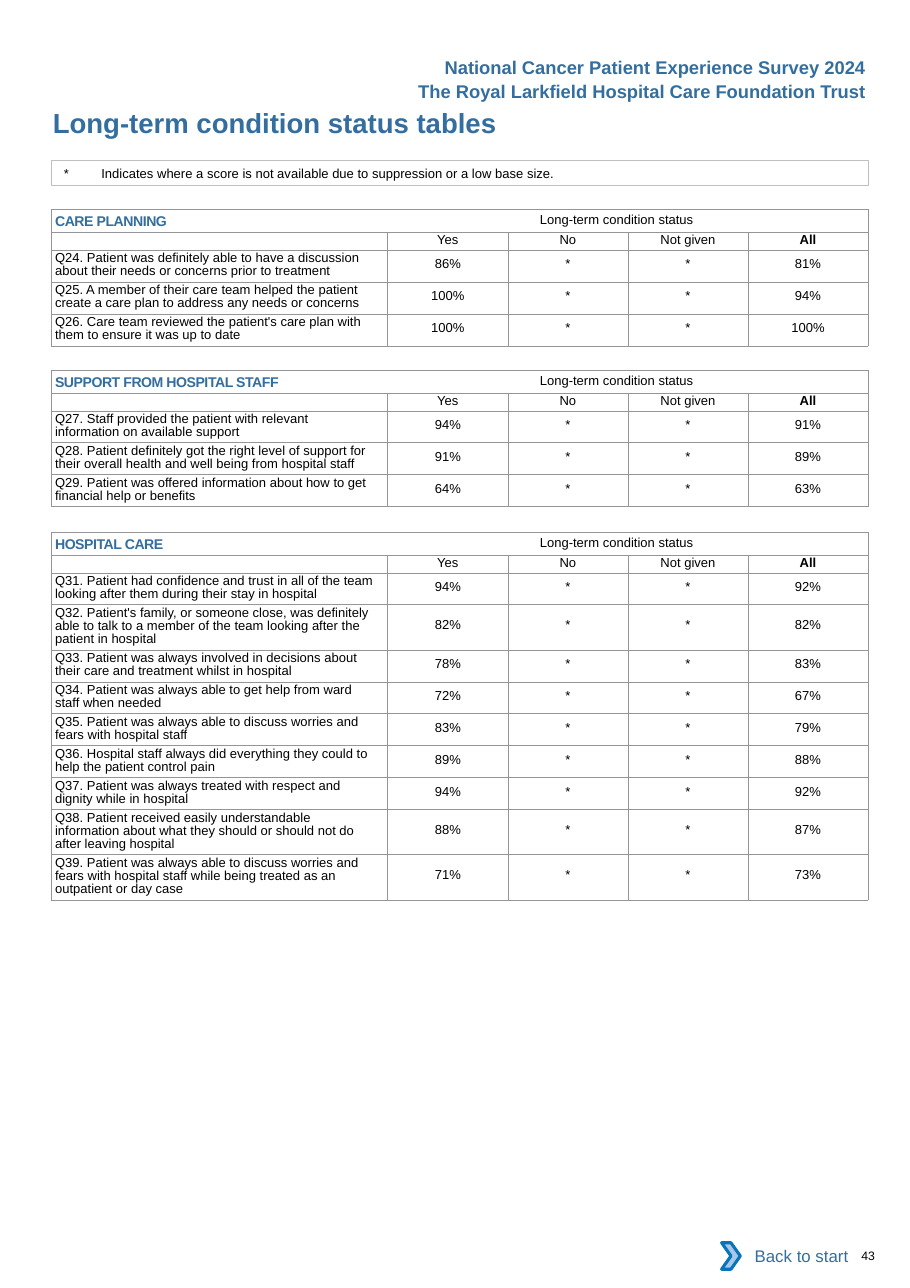
import lxml.etree
import pptx
import pptx.dml.color
import pptx.enum.shapes
import pptx.enum.text
import pptx.oxml.ns
import pptx.util

COLORS = {"heading": "336E9F", "text": "000000", "border": "939598", "note": "BFBFBF",
          "white": "FFFFFF", "arrow": "A8C7E9", "arrow_line": "0A74BB"}
RGB = {name: pptx.dml.color.RGBColor.from_string(value) for name, value in COLORS.items()}
ALIGN = pptx.enum.text.PP_ALIGN
ANCHOR = pptx.enum.text.MSO_ANCHOR
SHAPE = pptx.enum.shapes.MSO_SHAPE
qn = pptx.oxml.ns.qn

presentation = pptx.Presentation()
presentation.slide_width = pptx.util.Inches(8.26)
presentation.slide_height = pptx.util.Inches(11.69)
slide = presentation.slides.add_slide(presentation.slide_layouts[6])
UNIT = presentation.slide_width // 826
LEFT, WIDTH = 47, 741
COLUMNS = [305, 109, 109, 109, 109]
HEADER_ROWS = [21, 16]
ROW_HEIGHTS = {2: 29, 3: 41}
SCORE_TOPS = {2: 6, 3: 12}


def grid(*units):
    return [unit * UNIT for unit in units]


def write(holder, text, size, color="text", bold=False, align=ALIGN.LEFT,
          margins=(0, 0, 0, 0), spacing=None, tab=None):
    frame = getattr(holder, "text_frame", holder)
    (holder.margin_left, holder.margin_top,
     holder.margin_right, holder.margin_bottom) = grid(*margins)
    paragraph = frame.paragraphs[0]
    paragraph.text = text
    paragraph.alignment = align
    paragraph.font.name = "Arial"
    paragraph.font.size = pptx.util.Pt(size)
    paragraph.font.bold = bold
    paragraph.font.color.rgb = RGB[color]
    if spacing:
        paragraph.line_spacing = pptx.util.Pt(spacing)
    if tab:
        tabs = lxml.etree.Element(qn("a:tabLst"))
        lxml.etree.SubElement(tabs, qn("a:tab"), pos=str(tab * UNIT), algn="l")
        paragraph.font._element.addprevious(tabs)
    return paragraph


page_number = slide.shapes.add_textbox(*grid(772, 1133, 51, 13))
write(page_number.text_frame, "43", 8, margins=(10, 0, 0, 0))

title = slide.shapes.add_textbox(*grid(LEFT, 96, 450, 30))
write(title.text_frame, "Long-term condition status tables", 18, "heading", True,
      margins=(1, 0, 0, 0))

note = slide.shapes.add_shape(SHAPE.RECTANGLE, *grid(LEFT, 146, WIDTH, 22))
note.shadow.inherit = False
note.fill.background()
note.line.color.rgb = RGB["note"]
note.line.width = pptx.util.Pt(0.5)
note.text_frame.vertical_anchor = ANCHOR.TOP
write(note.text_frame,
      "*\tIndicates where a score is not available due to suppression or a low base size.",
      8.5, margins=(11, 4, 0, 4), tab=34)

sections = [
    ("CARE PLANNING", 190, [
        ("Q24. Patient was definitely able to have a discussion about their needs or concerns prior to treatment", 2, "86%", "81%"),
        ("Q25. A member of their care team helped the patient create a care plan to address any needs or concerns", 2, "100%", "94%"),
        ("Q26. Care team reviewed the patient's care plan with them to ensure it was up to date", 2, "100%", "100%"),
    ]),
    ("SUPPORT FROM HOSPITAL STAFF", 336, [
        ("Q27. Staff provided the patient with relevant\vinformation on available support", 2, "94%", "91%"),
        ("Q28. Patient definitely got the right level of support for their overall health and well being from hospital staff", 2, "91%", "89%"),
        ("Q29. Patient was offered information about how to get financial help or benefits", 2, "64%", "63%"),
    ]),
    ("HOSPITAL CARE", 483, [
        ("Q31. Patient had confidence and trust in all of the team looking after them during their stay in hospital", 2, "94%", "92%"),
        ("Q32. Patient's family, or someone close, was definitely able to talk to a member of the team looking after the patient in hospital", 3, "82%", "82%"),
        ("Q33. Patient was always involved in decisions about their care and treatment whilst in hospital", 2, "78%", "83%"),
        ("Q34. Patient was always able to get help from ward staff when needed", 2, "72%", "67%"),
        ("Q35. Patient was always able to discuss worries and fears with hospital staff", 2, "83%", "79%"),
        ("Q36. Hospital staff always did everything they could to help the patient control pain", 2, "89%", "88%"),
        ("Q37. Patient was always treated with respect and dignity while in hospital", 2, "94%", "92%"),
        ("Q38. Patient received easily understandable\vinformation about what they should or should not do after leaving hospital", 3, "88%", "87%"),
        ("Q39. Patient was always able to discuss worries and fears with hospital staff while being treated as an outpatient or day case", 3, "71%", "73%"),
    ]),
]

for section, top, questions in sections:
    heights = HEADER_ROWS + [ROW_HEIGHTS[lines] for _, lines, _, _ in questions]
    table = slide.shapes.add_table(len(heights), len(COLUMNS),
                                   *grid(LEFT, top, WIDTH, sum(heights))).table
    table.first_row = False
    table.horz_banding = False
    for column, width in zip(table.columns, grid(*COLUMNS)):
        column.width = width
    for row, height in zip(table.rows, grid(*heights)):
        row.height = height
    for cell in table.iter_cells():
        cell.fill.background()
        for position, side in enumerate(("a:lnL", "a:lnR", "a:lnT", "a:lnB")):
            border = lxml.etree.Element(qn(side), w="6350")
            fill = lxml.etree.SubElement(border, qn("a:solidFill"))
            lxml.etree.SubElement(fill, qn("a:srgbClr"), val=COLORS["border"])
            cell._tc.tcPr.insert(position, border)

    header = table.cell(0, 0)
    header.merge(table.cell(0, len(COLUMNS) - 1))
    header.vertical_anchor = ANCHOR.MIDDLE
    paragraph = write(header, "", 8.5, margins=(3, 0, 0, 0), spacing=11.8, tab=440)
    name = paragraph.add_run()
    name.text = section + "\t"
    name.font.size = pptx.util.Pt(15.8)
    name.font.bold = True
    name.font.color.rgb = RGB["heading"]
    name.font._element.set("baseline", "-8000")
    name.font._element.set("spc", "-25")
    paragraph.add_run().text = "Long-term condition status"

    for column, label in enumerate(["", "Yes", "No", "Not given", "All"]):
        write(table.cell(1, column), label, 8.5, bold=label == "All",
              align=ALIGN.CENTER, spacing=9.9)
    for row, (question, lines, yes, overall) in enumerate(questions, len(HEADER_ROWS)):
        write(table.cell(row, 0), question, 8.5, margins=(3, 2, 10, 0), spacing=8.6)
        for column, score in enumerate([yes, "*", "*", overall], 1):
            write(table.cell(row, column), score, 8.5, align=ALIGN.CENTER,
                  margins=(0, SCORE_TOPS[lines], 0, 0))

for text, left, top, width in [
    ("The Royal Larkfield Hospital Care Foundation Trust", 336, 68, 460),
    ("National Cancer Patient Experience Survey 2024", 392, 46, 404),
]:
    banner = slide.shapes.add_textbox(*grid(left, top, width, 30))
    banner.text_frame.word_wrap = False
    write(banner.text_frame, text, 12, "heading", True, ALIGN.RIGHT, (10, 5, 10, 5))

back_link = slide.shapes.add_group_shape()
label = back_link.shapes.add_shape(SHAPE.RECTANGLE, *grid(662, 1119, 118, 42))
label.shadow.inherit = False
label.fill.solid()
label.fill.fore_color.rgb = RGB["white"]
label.line.fill.background()
label.text_frame.vertical_anchor = ANCHOR.MIDDLE
write(label.text_frame, "Back to start", 11, "heading", align=ALIGN.RIGHT, margins=(10, 5, 10, 5))

arrow = back_link.shapes.add_shape(SHAPE.CHEVRON, *grid(655, 1128, 17, 24))
arrow.shadow.inherit = False
arrow.fill.solid()
arrow.fill.fore_color.rgb = RGB["arrow"]
arrow.line.color.rgb = RGB["arrow_line"]
arrow.line.width = pptx.util.Pt(2)

presentation.save("out.pptx")
